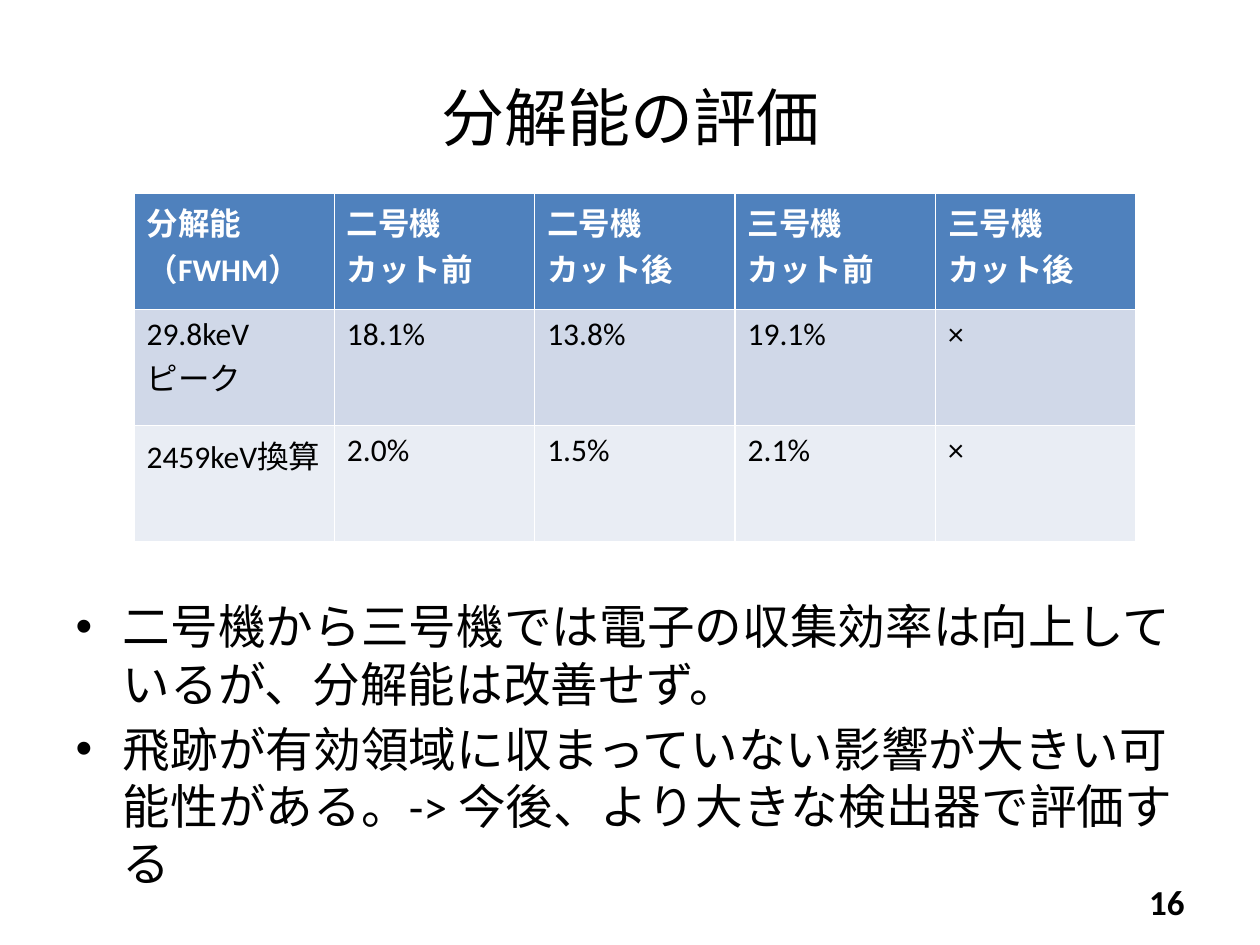
"""Build the resolution evaluation slide with its table and conclusions."""
from dataclasses import dataclass

from pptx import Presentation
from pptx.dml.color import RGBColor
from pptx.enum.text import MSO_ANCHOR as Anchor, MSO_AUTO_SIZE as AutoSize, PP_ALIGN as Align
from pptx.util import Emu, Pt

TITLE = "分解能の評価"
HEADER = [
    ["分解能", "（FWHM）"],
    ["二号機", "カット前"],
    ["二号機", "カット後"],
    ["三号機", "カット前"],
    ["三号機", "カット後"],
]
RESULTS = [
    [["29.8keV", "ピーク"], ["18.1%"], ["13.8%"], ["19.1%"], ["×"]],
    [["2459keV換算"], ["2.0%"], ["1.5%"], ["2.1%"], ["×"]],
]
CONCLUSIONS = [
    "二号機から三号機では電子の収集効率は向上しているが、分解能は改善せず。",
    "飛跡が有効領域に収まっていない影響が大きい可能性がある。-> 今後、より大きな検出器で評価する",
]
PAGE_NUMBER = "16"

SLIDE_SIZE = (1260, 945)
TITLE_BOX = (63, 38, 1134, 157)
BODY_BOX = (63, 591, 1134, 252)
NUMBER_BOX = (903, 876, 294, 51)
TABLE_BOX = (134, 193, 1002, 349)


@dataclass(frozen=True)
class Theme:
    font: str = "Calibri"
    text: str = "000000"
    light: str = "FFFFFF"
    row_fills: tuple = ("4F81BD", "D0D8E8", "E9EDF4")
    title_size: float = 36
    body_size: float = 27.2
    table_size: float = 18
    number_size: float = 20
    body_gap: float = 4.6


THEME = Theme()


def px(length):
    return Emu(round(length * 914400 / 126))


def place(shape, box):
    shape.left, shape.top, shape.width, shape.height = map(px, box)


def write(frame, lines, size, color=THEME.text, bold=False):
    for index, line in enumerate(lines):
        paragraph = frame.paragraphs[0] if index == 0 else frame.add_paragraph()
        run = paragraph.add_run()
        run.text = line
        run.font.name = THEME.font
        run.font.size = Pt(size)
        run.font.bold = bold
        run.font.color.rgb = RGBColor.from_string(color)


def add_results_table(slide):
    rows = [HEADER] + RESULTS
    table = slide.shapes.add_table(len(rows), len(HEADER), *map(px, TABLE_BOX)).table
    for row_index, (row, fill) in enumerate(zip(rows, THEME.row_fills)):
        is_header = row_index == 0
        color = THEME.light if is_header else THEME.text
        for column_index, lines in enumerate(row):
            cell = table.cell(row_index, column_index)
            cell.fill.solid()
            cell.fill.fore_color.rgb = RGBColor.from_string(fill)
            write(cell.text_frame, lines, THEME.table_size, color, is_header)


def main():
    presentation = Presentation()
    presentation.slide_width, presentation.slide_height = map(px, SLIDE_SIZE)
    slide = presentation.slides.add_slide(presentation.slide_layouts[1])

    title = slide.shapes.title
    place(title, TITLE_BOX)
    title.text_frame.vertical_anchor = Anchor.MIDDLE
    write(title.text_frame, [TITLE], THEME.title_size)

    body = slide.placeholders[1]
    place(body, BODY_BOX)
    body.text_frame.auto_size = AutoSize.NONE
    write(body.text_frame, CONCLUSIONS, THEME.body_size)
    for paragraph in body.text_frame.paragraphs:
        paragraph.line_spacing = 1.0
        paragraph.space_before = Pt(THEME.body_gap)

    number = slide.shapes.add_textbox(*map(px, NUMBER_BOX)).text_frame
    number.word_wrap = True
    number.vertical_anchor = Anchor.MIDDLE
    write(number, [PAGE_NUMBER], THEME.number_size, bold=True)
    number.paragraphs[0].alignment = Align.RIGHT

    add_results_table(slide)
    presentation.save("out.pptx")


if __name__ == "__main__":
    main()
